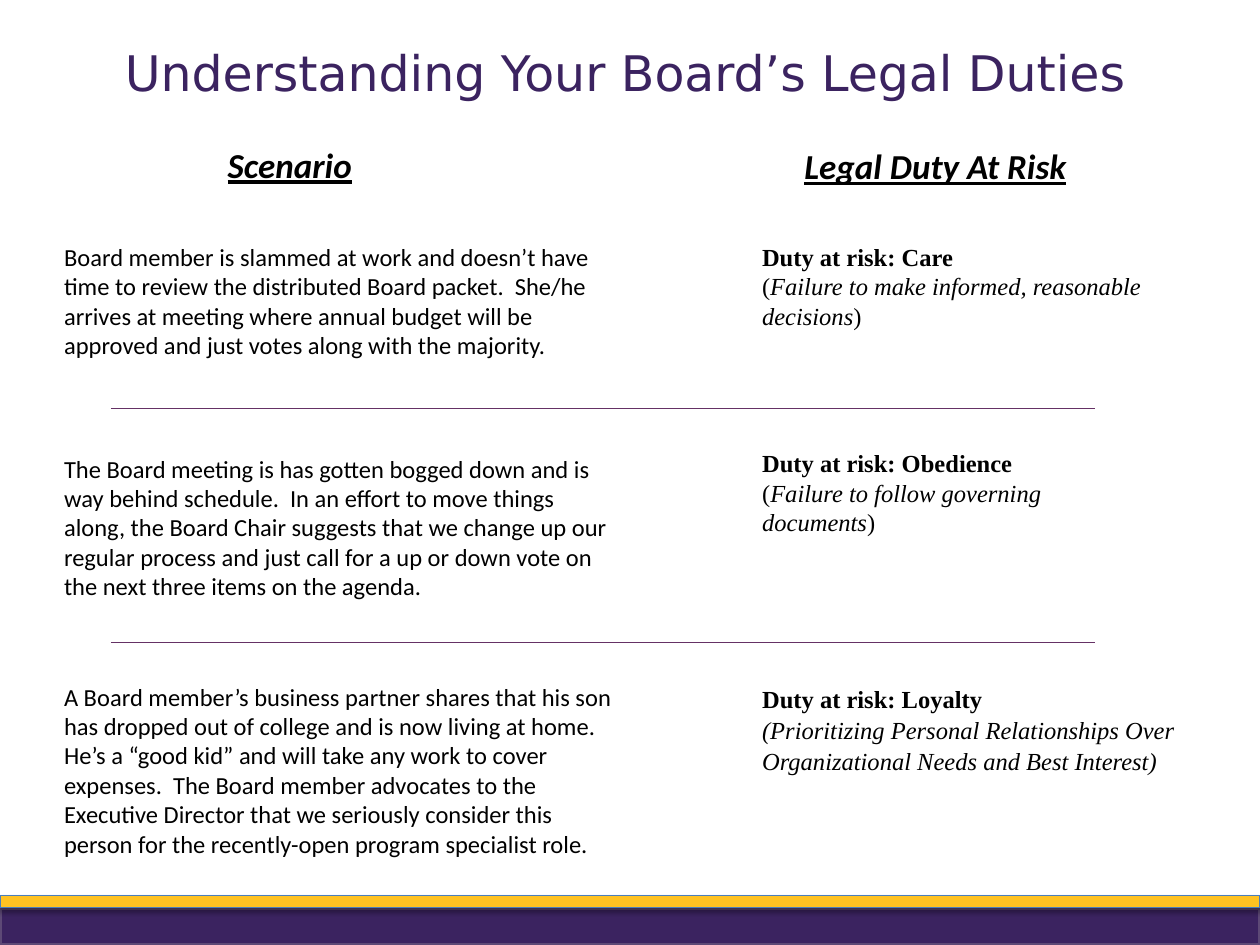
from lxml.etree import SubElement
from pptx import Presentation
from pptx.dml.color import RGBColor
from pptx.enum.shapes import MSO_CONNECTOR, MSO_SHAPE
from pptx.enum.text import MSO_ANCHOR, MSO_AUTO_SIZE, PP_ALIGN
from pptx.oxml.ns import qn
from pptx.util import Inches, Pt

COLORS = {
    "purple": "3B2360",
    "edge": "5D4976",
    "gold": "FFC222",
    "gold_edge": "4A7EBB",
    "rule": "653165",
    "text": "000000",
}
COLS, ROWS = 100, 75
TITLE = {"name": "DejaVu Sans", "size": Pt(28)}
HEADING = {"name": "Calibri", "size": Pt(20), "bold": True, "italic": True, "underline": True}
BODY = {"name": "Calibri", "size": Pt(14)}
DUTY = {"name": "Times New Roman", "size": Pt(14)}
BOLD = {"bold": True}
ITALIC = {"italic": True}
CENTER = {"alignment": PP_ALIGN.CENTER}
LOOSE = {"line_spacing": 1.07, "space_after": Pt(8)}
SCENARIO_COL, DUTY_COL = 4.1, 59.5
RULE_ROWS = (32.4, 51)

CASES = [
    {
        "scenario": "Board member is slammed at work and doesn’t have time to review the distributed "
        "Board packet.  She/he arrives at meeting where annual budget will be approved and just "
        "votes along with the majority.",
        "scenario_at": (18.7, 10.4),
        "duty": "Care",
        "reason": [("(", {}), ("Failure to make informed, reasonable decisions", ITALIC), (")", {})],
        "duty_at": (18.7, 35.4, 8.1),
        "layout": {},
    },
    {
        "scenario": "The Board meeting is has gotten bogged down and is way behind schedule.  In an "
        "effort to move things along, the Board Chair suggests that we change up our regular process "
        "and just call for a up or down vote on the next three items on the agenda.",
        "scenario_at": (35.5, 12.8),
        "duty": "Obedience",
        "reason": [("(", {}), ("Failure to follow governing documents", ITALIC), (")", {})],
        "duty_at": (35.1, 31.2, 8.1),
        "layout": {},
    },
    {
        "scenario": "A Board member’s business partner shares that his son has dropped out of college "
        "and is now living at home.  He’s a “good kid” and will take any work to cover expenses.  "
        "The Board member advocates to the Executive Director that we seriously consider this person "
        "for the recently-open program specialist role.",
        "scenario_at": (53.6, 15.1),
        "duty": "Loyalty",
        "reason": [
            ("(Prioritizing Personal Relationships Over Organizational Needs and Best Interest)", ITALIC)
        ],
        "duty_at": (53.6, 38.1, 8.4),
        "layout": LOOSE,
    },
]


def rgb(name):
    return RGBColor.from_string(COLORS[name])


def apply(target, values):
    for key, value in values.items():
        setattr(target, key, value)


class SlideBuilder:
    def __init__(self, prs):
        self.s = prs.slides.add_slide(prs.slide_layouts[6])
        self.col = prs.slide_width / COLS
        self.row = prs.slide_height / ROWS

    def box(self, x, y, w, h):
        return [round(v) for v in (x * self.col, y * self.row, w * self.col, h * self.row)]

    def bar(self, at, fill, edge, width):
        sp = self.s.shapes.add_shape(MSO_SHAPE.RECTANGLE, *self.box(*at))
        sp.shadow.inherit = False
        sp.fill.solid()
        sp.fill.fore_color.rgb = rgb(fill)
        sp.line.color.rgb = rgb(edge)
        sp.line.width = Pt(width)
        return sp

    def drop_shadow(self, sp):
        effects = sp.element.spPr.find(qn("a:effectLst"))
        shadow = SubElement(
            effects, qn("a:outerShdw"), blurRad=str(Pt(3)), dist=str(Pt(1.8)), dir="5400000", rotWithShape="0"
        )
        color = SubElement(shadow, qn("a:srgbClr"), val=COLORS["text"])
        SubElement(color, qn("a:alpha"), val="35000")

    def rule(self, x1, x2, y):
        x, top, w, _ = self.box(x1, y, x2 - x1, 0)
        ln = self.s.shapes.add_connector(MSO_CONNECTOR.STRAIGHT, x, top, x + w, top)
        ln.line.color.rgb = rgb("rule")
        ln.line.width = Pt(0.75)
        SubElement(ln.element.spPr, qn("a:effectLst"))

    def text(self, at, lines, font, color="text", layout={}, frame={}):
        tf = self.s.shapes.add_textbox(*self.box(*at)).text_frame
        apply(tf, {"word_wrap": True, "auto_size": MSO_AUTO_SIZE.NONE, **frame})
        p = tf.paragraphs[0]
        apply(p, layout)
        for i, line in enumerate(lines):
            if i:
                p.add_line_break()
            for words, style in line:
                r = p.add_run()
                r.text = words
                apply(r.font, {**font, **style})
                r.font.color.rgb = rgb(color)


def main():
    prs = Presentation()
    prs.slide_width, prs.slide_height = Inches(10), Inches(7.5)
    b = SlideBuilder(prs)

    b.bar((0, 72.1, COLS, 2.9), "purple", "edge", 2)
    b.drop_shadow(b.bar((0, 71.1, COLS, 0.9), "gold", "gold_edge", 0.75))

    margins = {f"margin_{side}": Inches(0.05) for side in ("left", "right", "top", "bottom")}
    b.text(
        (0, 2.6, 99.2, 6.3),
        [[("Understanding Your Board’s Legal Duties", {})]],
        TITLE,
        "purple",
        CENTER,
        {"vertical_anchor": MSO_ANCHOR.MIDDLE, **margins},
    )
    b.text((12.8, 10.9, 20.4, 4.4), [[("Scenario", {})]], HEADING, layout=CENTER)
    b.text((62.6, 11, 23.3, 4.4), [[("Legal Duty At Risk", {})]], HEADING, layout=CENTER)

    for case in CASES:
        top, height = case["scenario_at"]
        b.text((SCENARIO_COL, top, 45.9, height), [[(case["scenario"], {})]], BODY)
        lines = [[(f"Duty at risk: {case['duty']}", BOLD)], case["reason"]]
        b.text((DUTY_COL, *case["duty_at"]), lines, DUTY, layout=case["layout"])

    for y in RULE_ROWS:
        b.rule(8.8, 86.9, y)

    prs.save("out.pptx")


if __name__ == "__main__":
    main()
